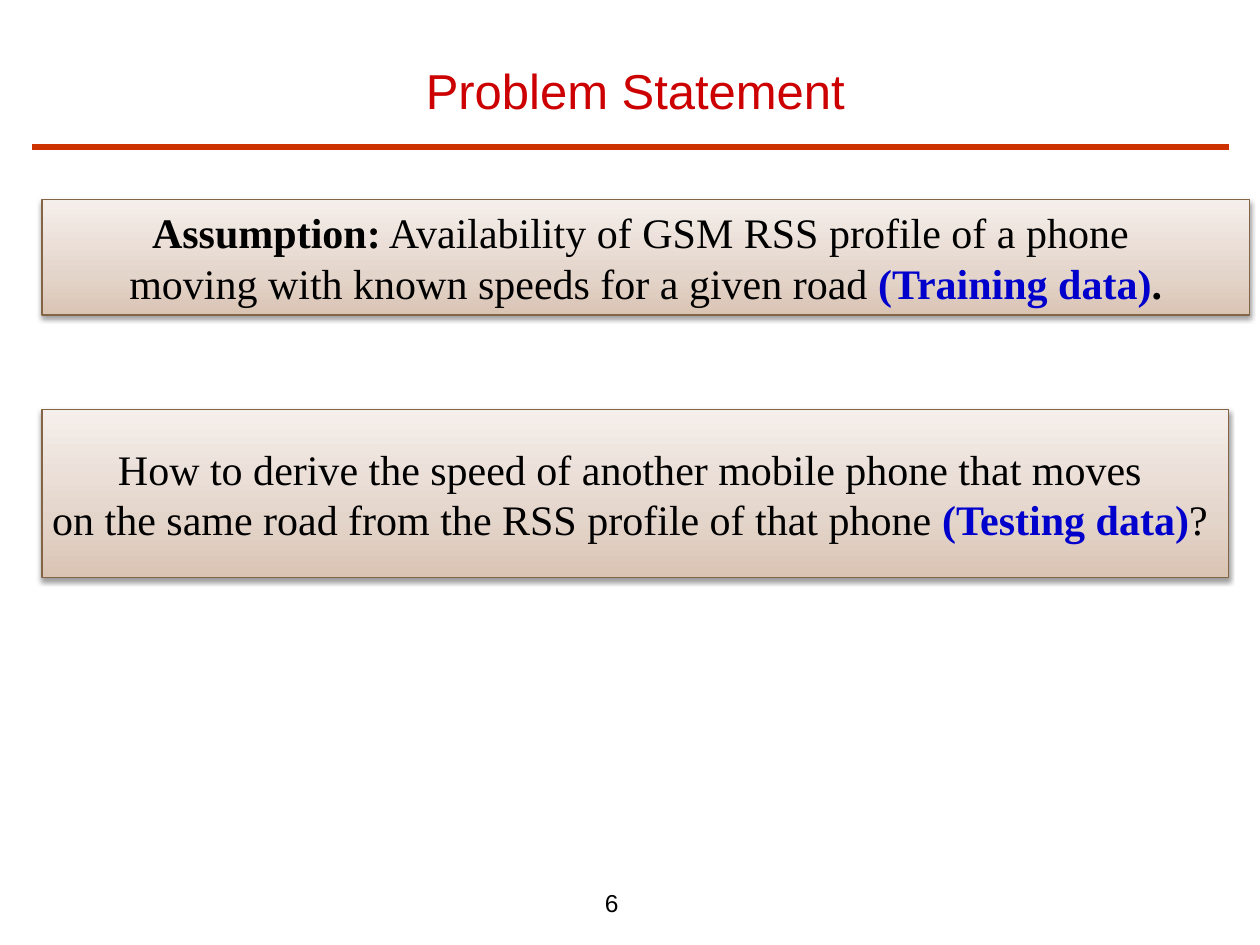
"""Build the problem statement slide."""
from pptx import Presentation
from pptx.dml.color import RGBColor
from pptx.enum.shapes import MSO_CONNECTOR, MSO_SHAPE
from pptx.enum.text import MSO_ANCHOR, PP_ALIGN
from pptx.oxml import parse_xml
from pptx.oxml.ns import nsdecls
from pptx.util import Pt

THEME = {
    "label_font": "Arial", "body_font": "Times New Roman",
    "title_size": 28, "body_size": 24, "label_size": 14,
    "title": "CC0000", "rule": "CC3300", "text": "000000", "accent": "0000CC",
    "border": "836445", "shadow": "000000",
    "gradient": [(0, "DAC4B4"), (35, "E4D5CB"), (100, "F5EFEB")],
}

LABELS = [
    ("6", (338.5, 504, 31.5, 24), "label_size", "text", PP_ALIGN.LEFT, MSO_ANCHOR.TOP),
    ("Problem Statement", (18, 18, 690, 54), "title_size", "title", PP_ALIGN.CENTER, MSO_ANCHOR.BOTTOM),
]

PANELS = [
    ((24, 114, 690, 66), [
        [("Assumption:", "text", True),
         (" Availability of GSM RSS profile of a phone ", "text", False)],
        [("moving with known speeds for a given road ", "text", False),
         ("(Training data)", "accent", True), (".", "text", True)],
    ]),
    ((24, 234, 678, 96), [
        [("How to derive the speed of another mobile phone that moves ", "text", False)],
        [("on the same road from the RSS profile of that phone ", "text", False),
         ("(Testing data)", "accent", True), ("? ", "text", False)],
    ]),
]


def add_run(paragraph, text, font, size, color, bold=False):
    run = paragraph.add_run()
    run.text = text
    run.font.name = THEME[font]
    run.font.size = Pt(THEME[size])
    run.font.bold = bold
    run.font.color.rgb = RGBColor.from_string(THEME[color])


def add_label(slide, text, box, size, color, alignment, anchor):
    frame = slide.shapes.add_textbox(*map(Pt, box)).text_frame
    frame.word_wrap = alignment == PP_ALIGN.CENTER
    frame.vertical_anchor = anchor
    paragraph = frame.paragraphs[0]
    paragraph.alignment = alignment
    add_run(paragraph, text, "label_font", size, color)


def add_rule(slide):
    rule = slide.shapes.add_connector(MSO_CONNECTOR.STRAIGHT, Pt(18), Pt(84), Pt(702), Pt(84))
    rule.line.color.rgb = RGBColor.from_string(THEME["rule"])
    rule.line.width = Pt(3)
    rule._element.spPr.append(parse_xml(f"<a:effectLst {nsdecls('a')}/>"))


def style_panel(shape):
    shape.line.color.rgb = RGBColor.from_string(THEME["border"])
    shape.line.width = Pt(0.75)
    stops = "".join(
        f'<a:gs pos="{position * 1000}"><a:srgbClr val="{color}"/></a:gs>'
        for position, color in THEME["gradient"])
    properties = shape._element.spPr
    properties.find("{*}ln").addprevious(parse_xml(
        f'<a:gradFill {nsdecls("a")} rotWithShape="1"><a:gsLst>{stops}</a:gsLst>'
        '<a:lin ang="16200000" scaled="0"/></a:gradFill>'))
    properties.append(parse_xml(
        f'<a:effectLst {nsdecls("a")}><a:outerShdw blurRad="{Pt(3.1)}" dist="{Pt(1.6)}" '
        f'dir="5400000" rotWithShape="0"><a:srgbClr val="{THEME["shadow"]}">'
        '<a:alpha val="38000"/></a:srgbClr></a:outerShdw></a:effectLst>'))


def add_panel(slide, box, lines):
    shape = slide.shapes.add_shape(MSO_SHAPE.RECTANGLE, *map(Pt, box))
    style_panel(shape)
    frame = shape.text_frame
    frame.word_wrap = False
    frame.vertical_anchor = MSO_ANCHOR.MIDDLE
    for index, runs in enumerate(lines):
        paragraph = frame.add_paragraph() if index else frame.paragraphs[0]
        paragraph.alignment = PP_ALIGN.CENTER
        for text, color, bold in runs:
            add_run(paragraph, text, "body_font", "body_size", color, bold)


def main():
    presentation = Presentation()
    presentation.slide_width, presentation.slide_height = Pt(720), Pt(540)
    slide = presentation.slides.add_slide(presentation.slide_layouts[6])
    add_rule(slide)
    for label in LABELS:
        add_label(slide, *label)
    for box, lines in PANELS:
        add_panel(slide, box, lines)
    presentation.save("out.pptx")


if __name__ == "__main__":
    main()
